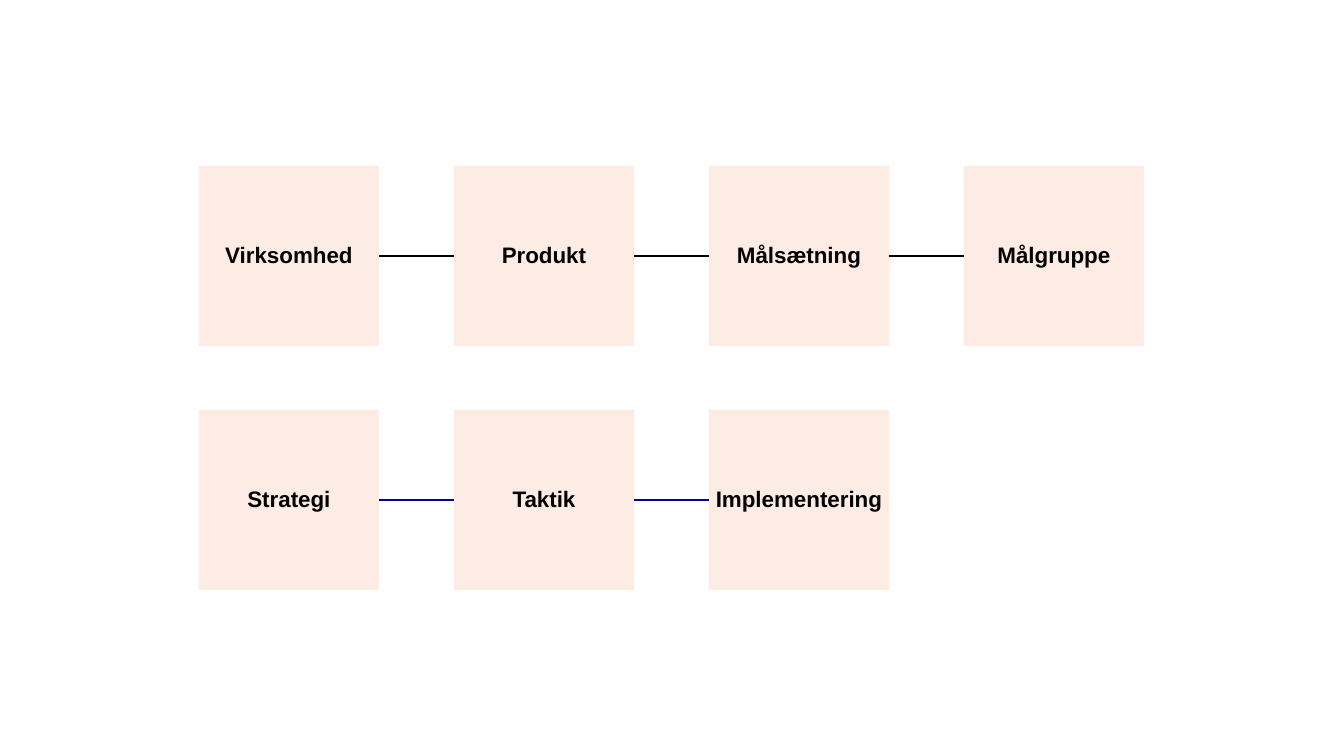
from pptx import Presentation
from pptx.dml.color import RGBColor
from pptx.enum.shapes import MSO_CONNECTOR as Connector, MSO_SHAPE as Shape
from pptx.enum.text import MSO_ANCHOR as Anchor, PP_ALIGN as Align
from pptx.oxml.ns import qn
from pptx.util import Emu, Pt
from lxml.etree import SubElement

PEACH = RGBColor(0xFD, 0xEC, 0xE3)
BLACK = RGBColor(0x00, 0x00, 0x00)
NAVY = RGBColor(0x03, 0x00, 0x9F)

BOX_SIZE = 180
LEFT, TOP = 199, 166
COLUMN_STEP, ROW_STEP = 255, 244

# Each row: line colour and the steps in order
ROWS = [
    (BLACK, ["Virksomhed", "Produkt", "Målsætning", "Målgruppe"]),
    (NAVY, ["Strategi", "Taktik", "Implementering"]),
]


def px(length):
    return Emu(round(length * 914400 / 100.8))


class ProcessSlide:
    font = "Arial"
    font_size = Pt(16)
    line_width = Pt(1)

    def __init__(self, presentation):
        self.slide = presentation.slides.add_slide(presentation.slide_layouts[6])

    def box(self, left, top, label):
        shape = self.slide.shapes.add_shape(
            Shape.RECTANGLE, px(left), px(top), px(BOX_SIZE), px(BOX_SIZE))
        shape.shadow.inherit = False
        shape.fill.solid()
        shape.fill.fore_color.rgb = PEACH
        shape.line.fill.background()

        frame = shape.text_frame
        frame.word_wrap = True
        frame.vertical_anchor = Anchor.MIDDLE
        frame.margin_left = frame.margin_right = 0
        frame.margin_top = frame.margin_bottom = px(5)
        paragraph = frame.paragraphs[0]
        paragraph.alignment = Align.CENTER
        paragraph.line_spacing = 0.9
        run = paragraph.add_run()
        run.text = label
        run.font.name = self.font
        run.font.size = self.font_size
        run.font.bold = True
        run.font.color.rgb = BLACK
        return shape

    def link(self, start, end, color):
        connector = self.slide.shapes.add_connector(Connector.STRAIGHT, 0, 0, 0, 0)
        connector.begin_connect(start, 1)
        connector.end_connect(end, 3)
        connector.line.color.rgb = color
        connector.line.width = self.line_width
        SubElement(connector._element.spPr, qn("a:effectLst"))


def main():
    presentation = Presentation()
    presentation.slide_width = px(1344)
    presentation.slide_height = px(756)
    process = ProcessSlide(presentation)

    # Rows of boxes, each joined to the one before it
    for row, (color, labels) in enumerate(ROWS):
        previous = None
        for column, label in enumerate(labels):
            box = process.box(LEFT + column * COLUMN_STEP, TOP + row * ROW_STEP, label)
            if previous is not None:
                process.link(box, previous, color)
            previous = box

    presentation.save("out.pptx")


if __name__ == "__main__":
    main()
